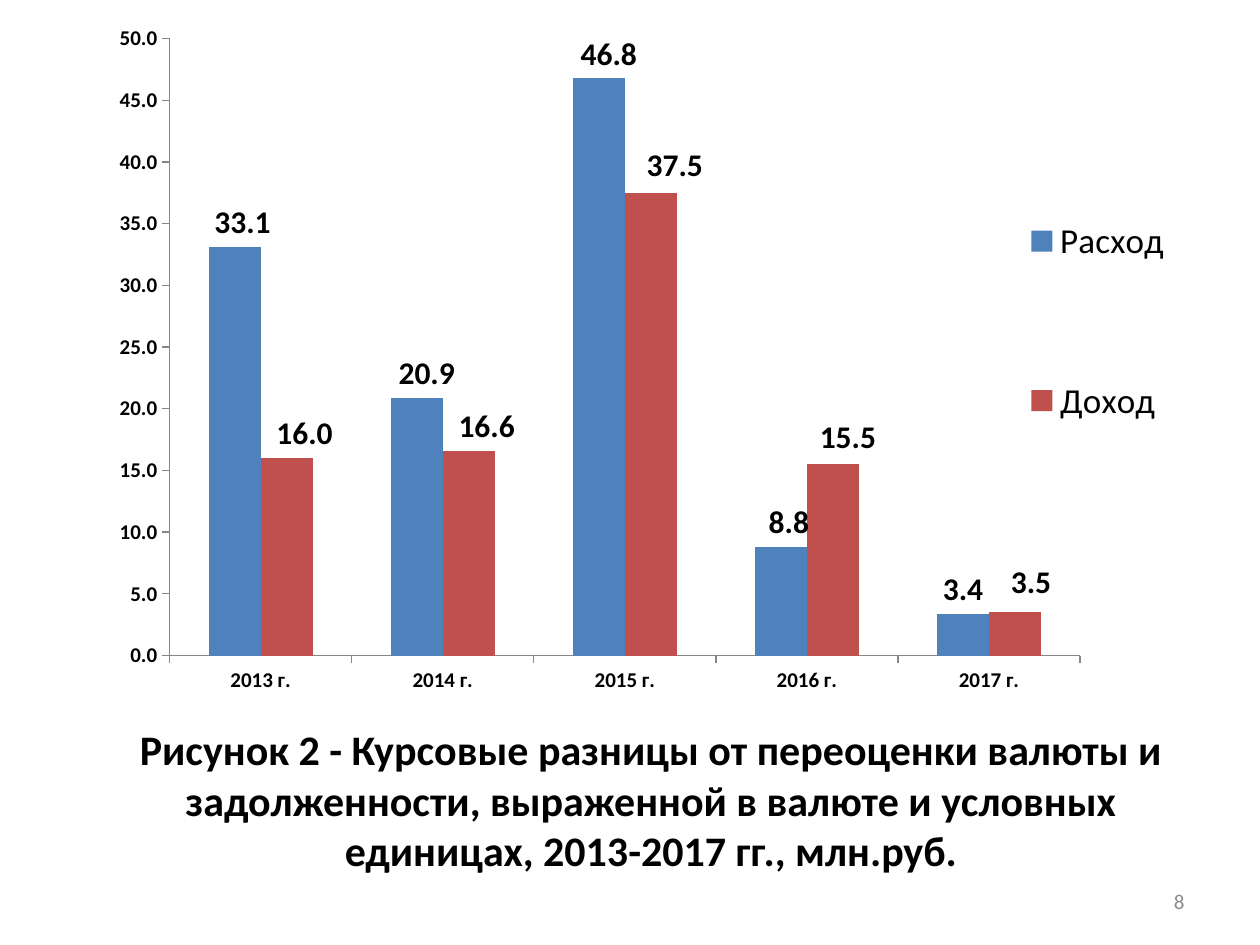
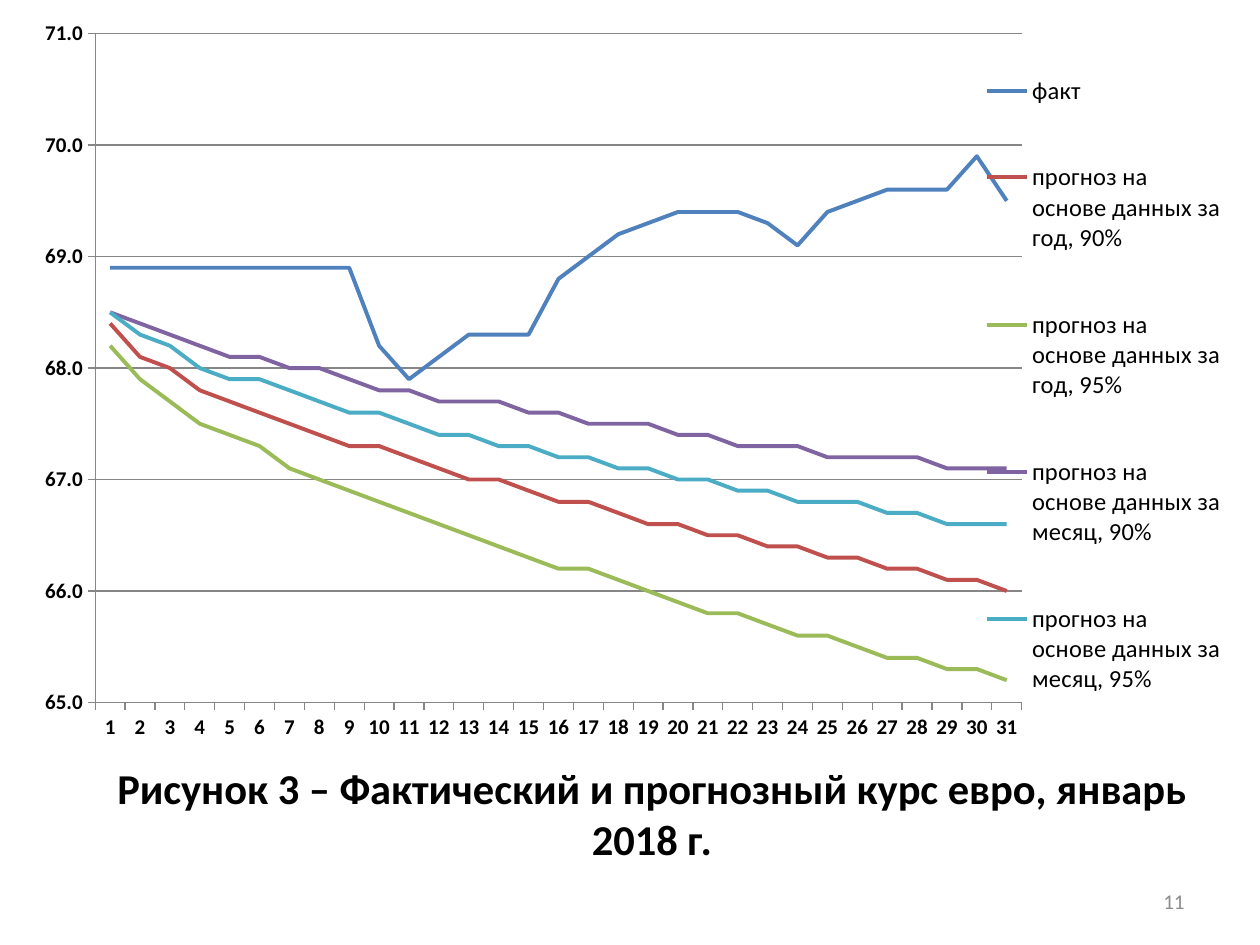
from dataclasses import dataclass

from lxml.etree import SubElement
from pptx import Presentation
from pptx.chart.data import CategoryChartData
from pptx.dml.color import RGBColor
from pptx.enum.chart import XL_CHART_TYPE, XL_LEGEND_POSITION, XL_MARKER_STYLE, XL_TICK_MARK
from pptx.enum.text import MSO_ANCHOR, MSO_AUTO_SIZE, PP_ALIGN
from pptx.oxml.ns import qn
from pptx.util import Emu, Pt


@dataclass(frozen=True)
class Theme:
    font: str = "Calibri"
    ink: str = "000000"
    muted: str = "8C8C8C"
    axis: str = "868686"
    series: tuple = ("4F81BD", "C0504D", "9BBB59", "8064A2", "4BACC6")
    title_size: float = 24
    wide_title_size: float = 24.3
    number_size: int = 12
    axis_size: int = 12
    label_size: int = 18
    base_size: int = 10
    column_legend_size: int = 20
    line_legend_size: int = 14
    line_width: float = 2.25


THEME = Theme()
EMU_PER_PX = 914400 / 126
TITLE_ONLY_LAYOUT = 5

# Exchange differences, million roubles
DIFFERENCE_YEARS = [f"{year} г." for year in range(2013, 2018)]
DIFFERENCES = {
    "Расход": (33.1, 20.9, 46.8, 8.8, 3.4),
    "Доход": (16, 16.6, 37.5, 15.5, 3.5),
}
# Label shifts from the default place above each column, in px
LABEL_SHIFTS = {
    "Расход": ((8, -1), (10, 0), (10, 0), (8, -1)),
    "Доход": ((18, -1), (18, 0), (24, -4), (15, -3), (16, -6)),
}

# Euro rate by day of January
RATE_DAYS = [str(day) for day in range(1, 32)]
RATES = {
    "факт": (
        68.9, 68.9, 68.9, 68.9, 68.9, 68.9, 68.9, 68.9, 68.9, 68.2, 67.9,
        68.1, 68.3, 68.3, 68.3, 68.8, 69, 69.2, 69.3, 69.4, 69.4, 69.4,
        69.3, 69.1, 69.4, 69.5, 69.6, 69.6, 69.6, 69.9, 69.5),
    "прогноз на основе данных за год, 90%": (
        68.4, 68.1, 68, 67.8, 67.7, 67.6, 67.5, 67.4, 67.3, 67.3, 67.2,
        67.1, 67, 67, 66.9, 66.8, 66.8, 66.7, 66.6, 66.6, 66.5, 66.5,
        66.4, 66.4, 66.3, 66.3, 66.2, 66.2, 66.1, 66.1, 66),
    "прогноз на основе данных за год, 95%": (
        68.2, 67.9, 67.7, 67.5, 67.4, 67.3, 67.1, 67, 66.9, 66.8, 66.7,
        66.6, 66.5, 66.4, 66.3, 66.2, 66.2, 66.1, 66, 65.9, 65.8, 65.8,
        65.7, 65.6, 65.6, 65.5, 65.4, 65.4, 65.3, 65.3, 65.2),
    "прогноз на основе данных за месяц, 90%": (
        68.5, 68.4, 68.3, 68.2, 68.1, 68.1, 68, 68, 67.9, 67.8, 67.8,
        67.7, 67.7, 67.7, 67.6, 67.6, 67.5, 67.5, 67.5, 67.4, 67.4, 67.3,
        67.3, 67.3, 67.2, 67.2, 67.2, 67.2, 67.1, 67.1, 67.1),
    "прогноз на основе данных за месяц, 95%": (
        68.5, 68.3, 68.2, 68, 67.9, 67.9, 67.8, 67.7, 67.6, 67.6, 67.5,
        67.4, 67.4, 67.3, 67.3, 67.2, 67.2, 67.1, 67.1, 67, 67, 66.9,
        66.9, 66.8, 66.8, 66.8, 66.7, 66.7, 66.6, 66.6, 66.6),
}


def px(length):
    return Emu(round(length * EMU_PER_PX))


def color(code):
    return RGBColor.from_string(code)


def style_font(font, size, bold=False, code=THEME.ink):
    font.name = THEME.font
    font.size = Pt(size)
    font.bold = bold
    font.color.rgb = color(code)


# Text parts shared by the slides
def write_line(frame, text, align, size, bold, code):
    para = frame.paragraphs[0]
    para.alignment = align
    span = para.add_run()
    span.text = text
    style_font(span.font, size, bold, code)


def add_title(page, text, area, bottom_inset, size):
    box = page.shapes.title
    box.left, box.top, box.width, box.height = map(px, area)
    frame = box.text_frame
    frame.word_wrap = True
    frame.auto_size = MSO_AUTO_SIZE.NONE
    frame.vertical_anchor = MSO_ANCHOR.BOTTOM
    frame.margin_top, frame.margin_bottom = 0, px(bottom_inset)
    write_line(frame, text, PP_ALIGN.CENTER, size, True, THEME.ink)


def add_page_number(page, number):
    frame = page.shapes.add_textbox(*map(px, (903, 876, 294, 50))).text_frame
    frame.word_wrap = True
    frame.vertical_anchor = MSO_ANCHOR.MIDDLE
    write_line(frame, str(number), PP_ALIGN.RIGHT, THEME.number_size, False, THEME.muted)


# Chart parts
def set_layout(element, index, settings):
    """Place a chart part by hand; settings are the manualLayout children."""
    for old in element.findall(qn("c:layout")):
        element.remove(old)
    layout = SubElement(element, qn("c:layout"))
    manual = SubElement(layout, qn("c:manualLayout"))
    for tag, value in settings.items():
        SubElement(manual, qn(f"c:{tag}")).set("val", str(value))
    element.insert(index, layout)


def edge_layout(x, y, w, h):
    return {"xMode": "edge", "yMode": "edge", "x": x, "y": y, "w": w, "h": h}


def style_axis(axis):
    axis.major_tick_mark = XL_TICK_MARK.OUTSIDE
    axis.minor_tick_mark = XL_TICK_MARK.NONE
    axis.format.line.color.rgb = color(THEME.axis)
    style_font(axis.tick_labels.font, THEME.axis_size, bold=True)


def add_chart(page, kind, area, categories, table, scale, plot_area, legend_area, legend_size):
    data = CategoryChartData(number_format="0.0")
    data.categories = categories
    for name, values in table.items():
        data.add_series(name, values)
    chart = page.shapes.add_chart(kind, *map(px, area), data).chart
    chart.has_title = False
    style_font(chart.font, THEME.base_size)

    style_axis(chart.category_axis)
    values_axis = chart.value_axis
    style_axis(values_axis)
    values_axis.has_major_gridlines = False
    values_axis.minimum_scale, values_axis.maximum_scale, values_axis.major_unit = scale
    values_axis.tick_labels.number_format = "0.0"
    values_axis.tick_labels.number_format_is_linked = False

    chart.has_legend = True
    legend = chart.legend
    legend.position = XL_LEGEND_POSITION.RIGHT
    legend.include_in_layout = False
    style_font(legend.font, legend_size)
    set_layout(legend._element, 1, edge_layout(*legend_area))
    plot_element = chart._chartSpace.find(".//" + qn("c:plotArea"))
    set_layout(plot_element, 0, {"layoutTarget": "inner", **edge_layout(*plot_area)})
    return chart


def label_columns(series, shifts, area):
    labels = series.data_labels
    labels.show_value = True
    labels.number_format = "0.0"
    labels.number_format_is_linked = False
    style_font(labels.font, THEME.label_size, bold=True)
    for index in range(len(shifts)):
        style_font(series.points[index].data_label.font, THEME.label_size, bold=True)
    for element, (right, down) in zip(series._element.iter(qn("c:dLbl")), shifts):
        set_layout(element, 1, {"x": round(right / area[2], 4), "y": round(down / area[3], 4)})


def add_differences_chart(page):
    area = (35, 19, 1181, 702)
    chart = add_chart(
        page, XL_CHART_TYPE.COLUMN_CLUSTERED, area, DIFFERENCE_YEARS, DIFFERENCES,
        scale=(0, 50, 5), plot_area=(0.114, 0.028, 0.771, 0.879),
        legend_area=(0.825, 0.12, 0.15, 0.62), legend_size=THEME.column_legend_size)
    plot = chart.plots[0]
    plot.gap_width = 150
    plot.overlap = 0
    plot.vary_by_categories = False
    for series, code in zip(plot.series, THEME.series):
        series.format.fill.solid()
        series.format.fill.fore_color.rgb = color(code)
        label_columns(series, LABEL_SHIFTS[series.name], area)


def add_rates_chart(page):
    chart = add_chart(
        page, XL_CHART_TYPE.LINE, (44, 19, 1191, 732), RATE_DAYS, RATES,
        scale=(65, 71, 1), plot_area=(0.043, 0.02, 0.778, 0.914),
        legend_area=(0.799, 0, 0.201, 1), legend_size=THEME.line_legend_size)
    chart.value_axis.has_major_gridlines = True
    chart.value_axis.major_gridlines.format.line.color.rgb = color(THEME.axis)
    plot = chart.plots[0]
    plot.vary_by_categories = False
    for series, code in zip(plot.series, THEME.series):
        series.smooth = False
        series.marker.style = XL_MARKER_STYLE.NONE
        series.format.line.color.rgb = color(code)
        series.format.line.width = Pt(THEME.line_width)


def add_page(deck, title, title_area, bottom_inset, title_size, number):
    page = deck.slides.add_slide(deck.slide_layouts[TITLE_ONLY_LAYOUT])
    add_title(page, title, title_area, bottom_inset, title_size)
    add_page_number(page, number)
    return page


def main():
    deck = Presentation()
    deck.slide_width, deck.slide_height = px(1260), px(945)

    # Exchange differences by year
    page = add_page(
        deck,
        "Рисунок 2 - Курсовые разницы от переоценки валюты и задолженности, "
        "выраженной в валюте и условных единицах, 2013-2017 гг., млн.руб.",
        (84, 721, 1134, 158), bottom_inset=4, title_size=THEME.title_size, number=8)
    add_differences_chart(page)

    # Actual and forecast euro rate
    page = add_page(
        deck, "Рисунок 3 – Фактический и прогнозный курс евро, январь 2018 г.",
        (95, 810, 1114, 89), bottom_inset=35, title_size=THEME.wide_title_size, number=11)
    add_rates_chart(page)

    deck.save("out.pptx")


if __name__ == "__main__":
    main()
